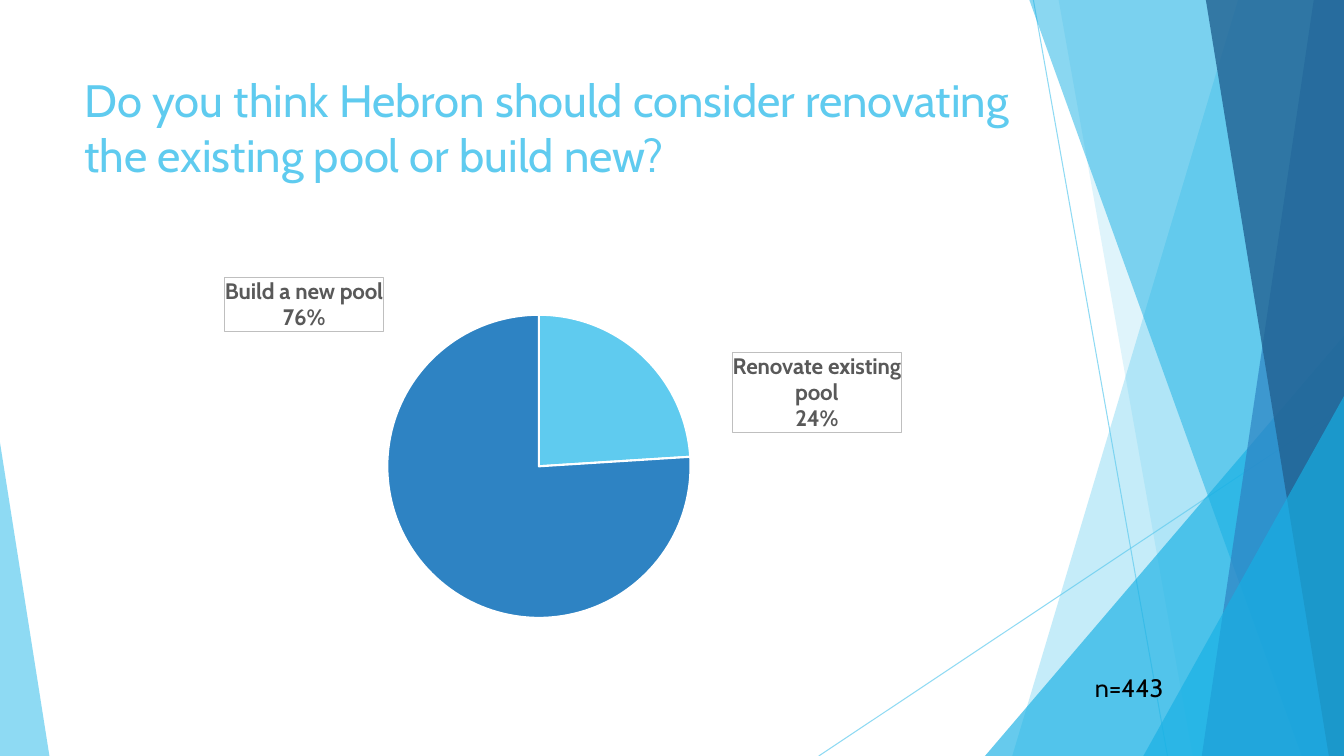
from pptx import Presentation, util as u
from pptx.chart.data import CategoryChartData
from pptx.dml.color import RGBColor
from pptx.enum import chart as ch, shapes, text
from pptx.oxml import parse_xml
from pptx.oxml.ns import nsdecls, qn
from lxml import etree


class Theme:
    """Colours, font and type sizes."""
    sky, cyan, blue, navy = "5FCBEF", "17B0E4", "2E83C3", "226292"
    white, black, grey, edge = "FFFFFF", "000000", "595959", "BFBFBF"
    font, head, note, label = "Cabin", 32.4, 18, 16


class Deck:
    """Draws on one slide, with lengths in percent of its width and height."""

    def __init__(self, theme):
        self.theme = theme
        self.file = Presentation()
        self.file.slide_width = u.Inches(13.33)
        self.file.slide_height = u.Inches(7.5)
        self.slide = self.file.slides.add_slide(self.file.slide_layouts[6])
        self.shapes = self.slide.shapes

    def place(self, *spots):
        sides = self.file.slide_width, self.file.slide_height
        return [round(sides[i % 2] * n / 100) for i, n in enumerate(spots)]

    def style(self, item, **form):
        for key, value in form.items():
            setattr(item, key, value)

    def type(self, font, size, tone, bold=False):
        self.style(font, name=self.theme.font, size=u.Pt(size), bold=bold)
        font.color.rgb = RGBColor.from_string(tone)

    def tint(self, fill, tone, host, alpha):
        fill.solid()
        fill.fore_color.rgb = RGBColor.from_string(tone)
        node = next(host.iter(qn("a:srgbClr")))
        etree.SubElement(node, qn("a:alpha")).set("val", str(alpha * 1000))

    def paint(self, shape, tone, alpha):
        shape.shadow.inherit = False
        self.tint(shape.fill, tone, shape._element.spPr, alpha)
        shape.line.fill.background()

    def band(self, top, foot, tone, alpha):
        start, *rest = [self.place(*p) for p in
                        ((top, 0), (100, 0), (100, 100), (foot, 100))]
        pen = self.shapes.build_freeform(*start)
        pen.add_line_segments(rest)
        self.paint(pen.convert_to_shape(), tone, alpha)

    def wedge(self, left, top, wide, peak, tone, alpha):
        box = self.place(left, top, wide, 100 - top)
        shape = self.shapes.add_shape(shapes.MSO_SHAPE.ISOSCELES_TRIANGLE, *box)
        shape.adjustments[0] = peak
        self.paint(shape, tone, alpha)

    def line(self, *ends):
        line = self.shapes.add_connector(
            shapes.MSO_CONNECTOR.STRAIGHT, *self.place(*ends))
        line.line.width = u.Pt(0.75)
        props = line._element.spPr
        self.tint(line.line.fill, self.theme.sky, props, 70)
        etree.SubElement(props, qn("a:effectLst"))

    def text(self, box, words, size, tone):
        frame = self.shapes.add_textbox(*self.place(*box)).text_frame
        self.style(frame, word_wrap=True, vertical_anchor=text.MSO_ANCHOR.TOP)
        run = frame.paragraphs[0].add_run()
        run.text = words
        self.type(run.font, size, tone)

    def layout(self, x, y, wide=None, high=None):
        parts = [("x", x), ("y", y)]
        if wide:
            parts = [("layoutTarget", "inner"), ("xMode", "edge"),
                     ("yMode", "edge"), *parts, ("w", wide), ("h", high)]
        body = "".join(f'<c:{k} val="{v}"/>' for k, v in parts)
        return parse_xml(f'<c:layout {nsdecls("c")}><c:manualLayout>{body}'
                         '</c:manualLayout></c:layout>')

    def pie(self, box, area, slices):
        t = self.theme
        data = CategoryChartData(number_format="0")
        data.categories = [s[0] for s in slices]
        data.add_series("Series 1", [s[1] for s in slices])
        chart = self.shapes.add_chart(
            ch.XL_CHART_TYPE.PIE, *self.place(*box), data).chart
        self.style(chart, has_legend=False, has_title=False)
        self.type(chart.font, 10, t.black)
        plot = chart.plots[0]
        plot.vary_by_categories = True
        series = plot.series[0]
        labels = series.data_labels
        self.style(labels, show_value=False, show_category_name=True,
                   show_percentage=True, number_format="0%",
                   number_format_is_linked=False,
                   position=ch.XL_LABEL_POSITION.OUTSIDE_END)
        self.type(labels.font, t.label, t.grey, True)
        for i, (_, _, tone, shift) in enumerate(slices):
            point = series.points[i]
            point.format.fill.solid()
            point.format.fill.fore_color.rgb = RGBColor.from_string(tone)
            point.format.line.width = u.Pt(1.5)
            point.format.line.color.rgb = RGBColor.from_string(t.white)
            label = point.data_label
            self.type(label.font, t.label, t.grey, True)
            label.position = ch.XL_LABEL_POSITION.OUTSIDE_END
        root = chart._chartSpace
        for node, part in zip(root.iter(qn("c:dLbl")), slices):
            self.callout(node, part[3])
        for node in root.iter(qn("c:showLeaderLines")):
            node.set("val", "0")
        zone = next(root.iter(qn("c:plotArea")))
        for old in zone.findall(qn("c:layout")):
            zone.remove(old)
        zone.insert(0, self.layout(*area))

    def callout(self, node, shift):
        for old in node.findall(qn("c:spPr")):
            node.remove(old)
        frame = parse_xml(
            f'<c:spPr {nsdecls("c", "a")}><a:solidFill><a:srgbClr '
            f'val="{self.theme.white}"/></a:solidFill><a:ln w="9525"><a:solidFill>'
            f'<a:srgbClr val="{self.theme.edge}"/></a:solidFill></a:ln></c:spPr>')
        place = self.layout(*shift)
        node.find(qn("c:idx")).addnext(place)
        place.addnext(frame)
        flags = {"showVal": 0, "showCatName": 1, "showPercent": 1}
        for key, value in flags.items():
            node.find(qn("c:" + key)).set("val", str(value))
        etree.SubElement(node, qn("c:separator")).text = "\n"


def main():
    """Builds the survey slide."""
    t = Theme
    deck = Deck(t)
    deck.line(76.89, 0, 86.87, 100)
    deck.line(100, 53.73, 60.92, 100)
    deck.band(92.12, 75.32, t.sky, 36)
    deck.band(78.77, 88.75, t.sky, 20)
    deck.wedge(73.29, 44.4, 26.71, 1, t.cyan, 66)
    deck.band(76.59, 96.85, t.cyan, 50)
    deck.band(97.75, 89.42, t.blue, 70)
    deck.band(89.72, 98.87, t.navy, 80)
    deck.wedge(85.07, 52.4, 14.93, 1, t.cyan, 66)
    deck.wedge(0, 58.53, 3.68, 0, t.sky, 70)
    deck.text((5.55, 8.93, 70.52, 19.2),
              "Do you think Hebron should consider renovating "
              "the existing pool or build new?", t.head, t.sky)
    deck.pie((5.55, 31.73, 70.52, 56.53), (0.33, 0.17, 0.32, 0.72), [
        ("Renovate existing pool", 24, t.sky, (0.09, 0.19)),
        ("Build a new pool", 76, t.blue, (-0.05, -0.71))])
    deck.text((80.72, 88.27, 11.7, 5.33), "n=443", t.note, t.black)
    deck.file.save("out.pptx")


if __name__ == "__main__":
    main()
